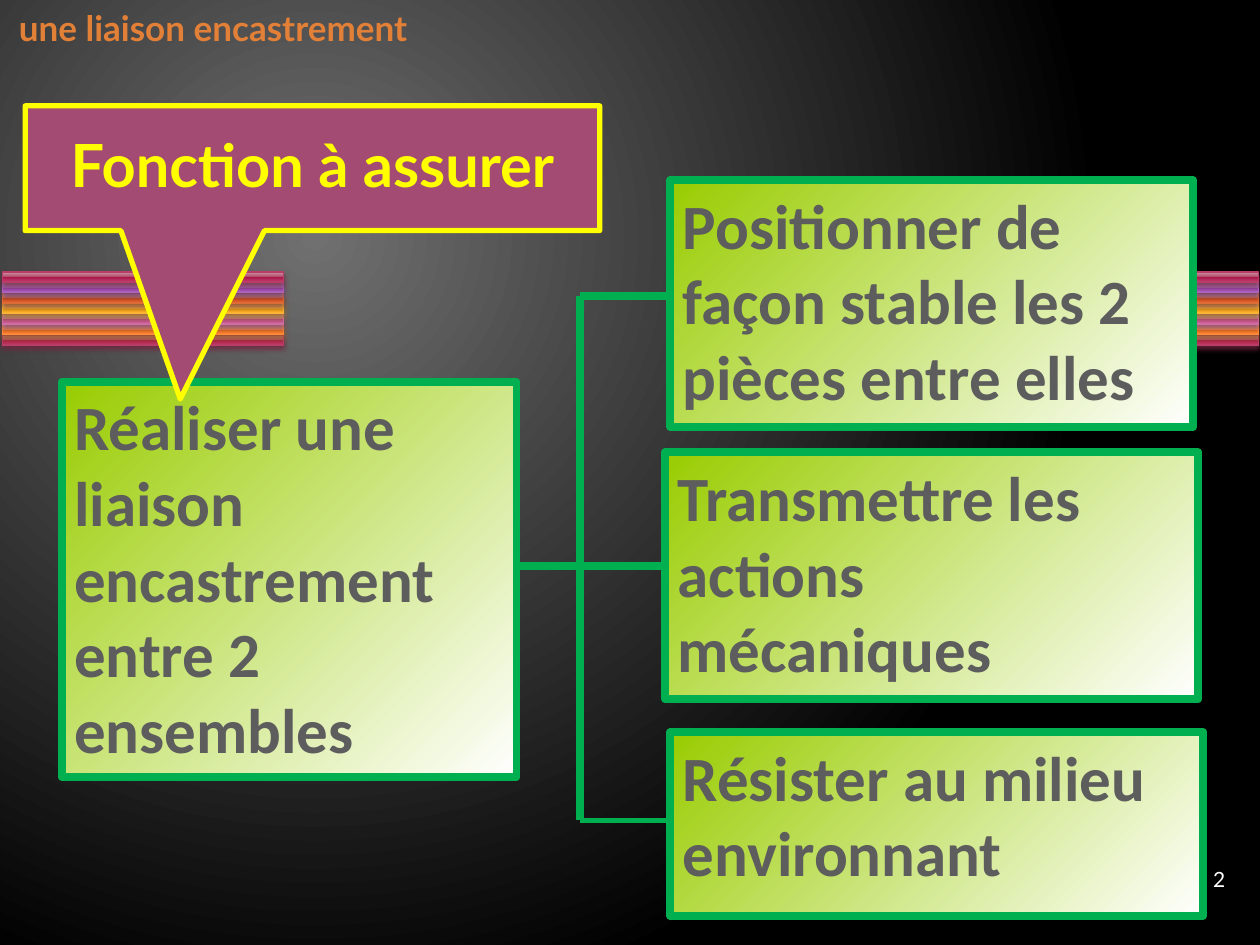
from lxml import etree
from pptx import Presentation
from pptx.dml.color import RGBColor
from pptx.enum.shapes import MSO_CONNECTOR, MSO_SHAPE
from pptx.enum.text import MSO_ANCHOR, PP_ALIGN
from pptx.oxml import parse_xml
from pptx.oxml.ns import qn
from pptx.util import Inches, Pt

DRAWING = "http://schemas.openxmlformats.org/drawingml/2006/main"
GREEN = RGBColor(0x00, 0xB0, 0x50)
LIME = RGBColor(0x99, 0xCC, 0x00)
WHITE = RGBColor(0xFF, 0xFF, 0xFF)
BLACK = RGBColor(0x00, 0x00, 0x00)
BACKDROP_GRAY = RGBColor(0x70, 0x70, 0x70)
TEXT_GRAY = RGBColor(0x5D, 0x5D, 0x5D)
ORANGE = RGBColor(0xE3, 0x80, 0x37)
YELLOW = RGBColor(0xFF, 0xFF, 0x00)
PLUM = RGBColor(0xA3, 0x4B, 0x73)

TITLE = "une liaison encastrement"
CALLOUT = "Fonction à assurer"
SLIDE_NUMBER = "2"
FUNCTION_BOXES = [
    ("Réaliser une liaison encastrement entre 2 ensembles", (0.49, 3.03, 3.61, 3.14)),
    ("Positionner de façon stable les 2 pièces entre elles", (5.32, 1.43, 4.15, 1.96)),
    ("Transmettre les actions mécaniques", (5.28, 3.59, 4.23, 1.96)),
    ("Résister au milieu environnant", (5.32, 5.81, 4.23, 1.46)),
]
TRUNK_X, TOP_Y, MIDDLE_Y, BOTTOM_Y = 4.6, 2.35, 4.49, 6.51
BRANCHES = [
    ((4.09, MIDDLE_Y), (5.28, MIDDLE_Y), 4.5),
    ((TRUNK_X, BOTTOM_Y), (TRUNK_X, TOP_Y), 4.5),
    ((TRUNK_X, TOP_Y), (5.32, TOP_Y), 4.5),
    ((TRUNK_X, BOTTOM_Y), (5.32, BOTTOM_Y), 3),
]

STRIPE_POSITIONS = (0, 49, 49, 92, 100)
STRIPE_STYLES = {
    "crimson": ("CE94A2 B34869 A61749 C13764 CA5D7C", "B83D68", "722640"),
    "violet": ("C6A2D0 A666B4 8F3EA1 AD5DBF BA76CA", "AC66BB", "6A3F73"),
    "rust": ("E7A493 D66B42 CC4809 E9642C F07B55", "DE6C36", "894321"),
    "amber": ("FBCC93 EFAE43 E59807 FFB432 FFBE5F", "F9B639", "9A7023"),
    "pink": ("DDA4C1 C66B9D B34181 D361A0 DC79AE", "CF6DA4", "804365"),
    "orange": ("FBB494 F08745 E5670B FF8736 FF9961", "FA8D3D", "9A5726"),
}
STRIPE_ORDER = ["crimson", "violet", "rust", "amber", "pink", "orange", "crimson"]
STRIPE_BANDS = [(0.02, 2.23), (9.39, 0.6)]
STRIPE_TOP, STRIPE_HEIGHT = 2.16, 0.08
STRIPE_STEP = 0.5 / (len(STRIPE_ORDER) - 1)


def apply_gradient(fill, parent, stops, direction):
    fill.gradient()
    stop_xml = "".join(
        f'<a:gs pos="{position * 1000}"><a:srgbClr val="{color}"/></a:gs>'
        for position, color in stops
    )
    gradient = parse_xml(
        f'<a:gradFill xmlns:a="{DRAWING}" rotWithShape="1">'
        f"<a:gsLst>{stop_xml}</a:gsLst>{direction}</a:gradFill>"
    )
    parent.replace(parent.find(qn("a:gradFill")), gradient)


def linear(angle):
    return f'<a:lin ang="{angle * 60000}" scaled="0"/>'


def add_box(slide, preset, bounds, line_color, line_width):
    shape = slide.shapes.add_shape(preset, *map(Inches, bounds))
    shape.shadow.inherit = False
    shape.line.color.rgb = line_color
    shape.line.width = Pt(line_width)
    return shape


def write_text(shape, text, *, size, color, font="Lato", bold=False,
               anchor=MSO_ANCHOR.MIDDLE, align=PP_ALIGN.LEFT,
               spacing=None, space_after=0, left_inset=0.1):
    frame = shape.text_frame
    frame.word_wrap = True
    frame.vertical_anchor = anchor
    frame.margin_left = Inches(left_inset)
    paragraph = frame.paragraphs[0]
    paragraph.alignment = align
    paragraph.line_spacing = spacing
    paragraph.space_after = Pt(space_after)
    run = paragraph.add_run()
    run.text = text
    run.font.name = font
    run.font.size = Pt(size)
    run.font.bold = bold
    run.font.color.rgb = color


def add_label(slide, bounds, text, **text_format):
    write_text(slide.shapes.add_textbox(*map(Inches, bounds)), text, **text_format)


def add_stripe(slide, left, width, row, style):
    colors, line_color, shadow_color = STRIPE_STYLES[style]
    bounds = (left, STRIPE_TOP + row * STRIPE_STEP, width, STRIPE_HEIGHT)
    stripe = add_box(slide, MSO_SHAPE.RECTANGLE, bounds, RGBColor.from_string(line_color), 0.9)
    properties = stripe.element.spPr
    apply_gradient(stripe.fill, properties, zip(STRIPE_POSITIONS, colors.split()), linear(90))
    properties.find(qn("a:effectLst")).append(parse_xml(
        f'<a:outerShdw xmlns:a="{DRAWING}" blurRad="{Pt(3.1)}" dist="{Pt(2)}" dir="5400000" '
        f'rotWithShape="0"><a:srgbClr val="{shadow_color}"><a:alpha val="83000"/>'
        "</a:srgbClr></a:outerShdw>"
    ))


def add_branch(slide, start, end, width):
    branch = slide.shapes.add_connector(MSO_CONNECTOR.STRAIGHT, *map(Inches, start + end))
    branch.line.color.rgb = GREEN
    branch.line.width = Pt(width)
    etree.SubElement(branch.element.spPr, qn("a:effectLst"))


def main():
    presentation = Presentation()
    presentation.slide_width = Inches(10)
    presentation.slide_height = Inches(7.5)
    slide = presentation.slides.add_slide(presentation.slide_layouts[6])

    background_fill = slide.background.fill
    background_fill.gradient()
    apply_gradient(
        background_fill,
        slide.element.cSld.find(qn("p:bg")).find(qn("p:bgPr")),
        [(0, BACKDROP_GRAY), (100, BLACK)],
        '<a:path path="circle"><a:fillToRect l="50000" t="50000" r="100000" b="100000"/></a:path>',
    )

    for left, width in STRIPE_BANDS:
        for row, style in reversed(list(enumerate(STRIPE_ORDER))):
            add_stripe(slide, left, width, row, style)

    add_label(slide, (0, -0.12, 10, 0.68), TITLE, size=20, color=ORANGE,
              bold=True, left_inset=0.15)

    for text, bounds in FUNCTION_BOXES:
        box = add_box(slide, MSO_SHAPE.RECTANGLE, bounds, GREEN, 4.5)
        apply_gradient(box.fill, box.element.spPr, [(0, LIME), (100, WHITE)], linear(45))
        write_text(box, text, size=36, color=TEXT_GRAY, font="Calibri", bold=True,
                   anchor=MSO_ANCHOR.TOP, space_after=10)

    for start, end, width in BRANCHES:
        add_branch(slide, start, end, width)

    callout = add_box(slide, MSO_SHAPE.RECTANGULAR_CALLOUT, (0.2, 0.84, 4.56, 0.99), YELLOW, 3)
    callout.adjustments[0] = -0.23
    callout.adjustments[1] = 1.85
    callout.fill.solid()
    callout.fill.fore_color.rgb = PLUM
    write_text(callout, CALLOUT, size=34, color=YELLOW, bold=True,
               align=PP_ALIGN.CENTER, spacing=0.9)

    add_label(slide, (9.53, 6.73, 0.47, 0.5), SLIDE_NUMBER, size=12, color=WHITE)
    presentation.save("out.pptx")


if __name__ == "__main__":
    main()
